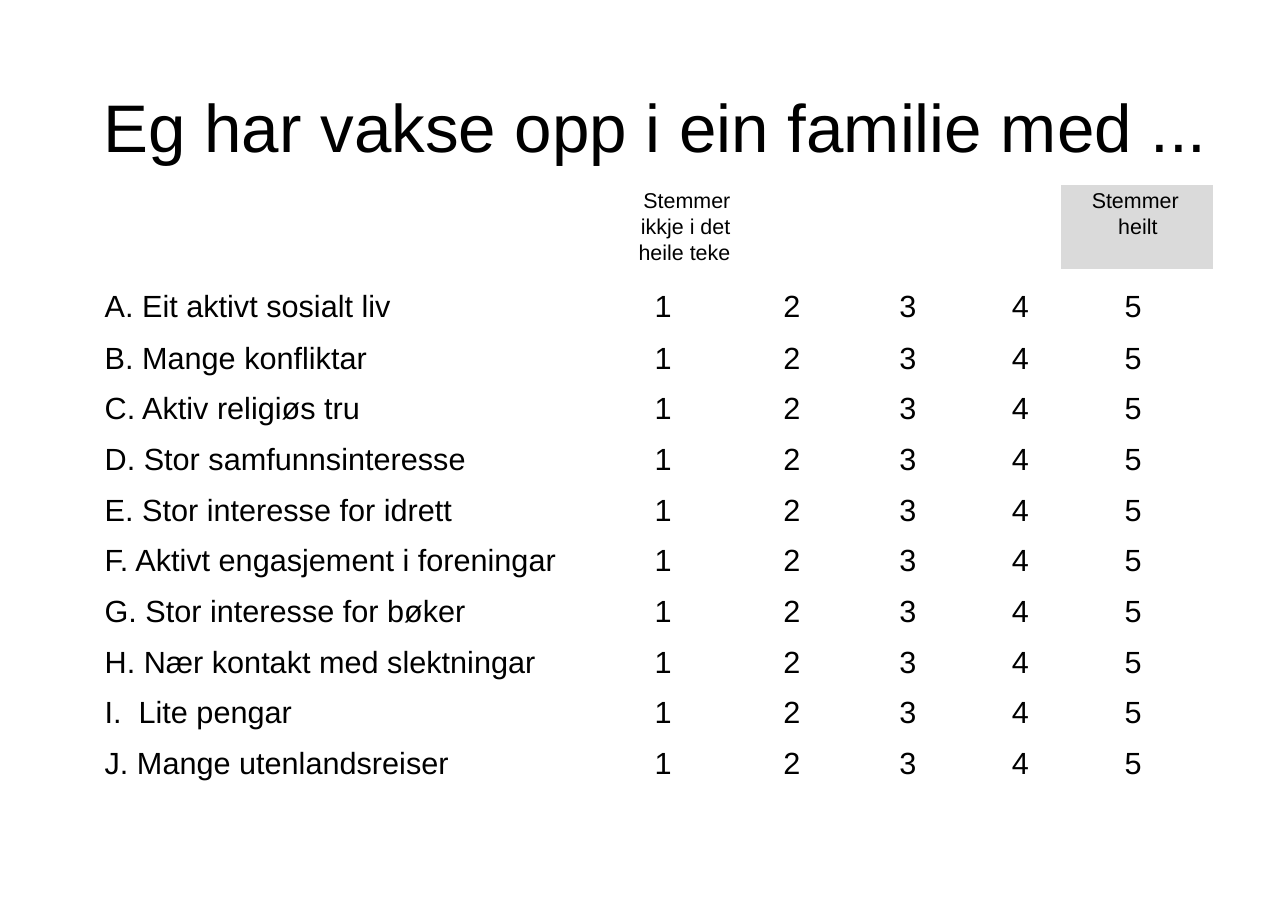
"""Build a survey slide that rates ten statements about growing up from 1 to 5."""
from dataclasses import dataclass

from pptx import Presentation
from pptx.dml.color import RGBColor
from pptx.enum.text import MSO_ANCHOR, MSO_AUTO_SIZE, PP_ALIGN
from pptx.util import Inches, Pt


@dataclass(frozen=True)
class Theme:
    font: str = "Arial"
    ink: RGBColor = RGBColor(0, 0, 0)
    shade: RGBColor = RGBColor(0xDA, 0xDA, 0xDA)
    title: Pt = Pt(44)
    body: Pt = Pt(20)
    label: Pt = Pt(14)


theme = Theme()


def write(frame, text, size, align=PP_ALIGN.LEFT):
    frame.text = text
    para = frame.paragraphs[0]
    para.alignment = align
    para.font.name = theme.font
    para.font.size = size
    para.font.color.rgb = theme.ink
    return para


def indent(para, left, first, right=0):
    props = para._p.get_or_add_pPr()
    for name, size in (("marL", left), ("marR", right), ("indent", first)):
        props.set(name, str(Inches(size)))


items = [
    "A. Eit aktivt sosialt liv",
    "B. Mange konfliktar",
    "C. Aktiv religiøs tru",
    "D. Stor samfunnsinteresse",
    "E. Stor interesse for idrett",
    "F. Aktivt engasjement i foreningar",
    "G. Stor interesse for bøker",
    "H. Nær kontakt med slektningar",
    "I.  Lite pengar",
    "J. Mange utenlandsreiser",
]
columns = [
    (4.28, PP_ALIGN.LEFT, 0.03, 0),
    (1.67, PP_ALIGN.CENTER, 0, 0.03),
    (0.85, PP_ALIGN.LEFT, 0.24, 0),
    (1.04, PP_ALIGN.CENTER, 0.02, 0.02),
    (0.87, PP_ALIGN.RIGHT, 0, 0.29),
    (1.38, PP_ALIGN.CENTER, 0, 0.07),
]
heights = [0.76, 0.61] + [0.46] * 8 + [0.38]

deck = Presentation()
deck.slide_width, deck.slide_height = Inches(11.69), Inches(8.28)
slide = deck.slides.add_slide(deck.slide_layouts[5])

title = slide.shapes.title
title.left, title.top = Inches(0.93), Inches(0.76)
title.width, title.height = Inches(10.17), Inches(0.75)
frame = title.text_frame
frame.margin_left = frame.margin_right = frame.margin_bottom = 0
frame.margin_top = Inches(0.01)
frame.vertical_anchor = MSO_ANCHOR.TOP
frame.auto_size = MSO_AUTO_SIZE.NONE
frame.word_wrap = True
indent(write(frame, "Eg har vakse opp i ein familie med ...", theme.title), 0.01, 0)

table = slide.shapes.add_table(
    len(heights), len(columns), Inches(0.92), Inches(1.68),
    Inches(sum(col[0] for col in columns)), Inches(sum(heights)),
).table
table.first_row = table.horz_banding = False
style = table._tbl.tblPr[0]
style.text = "{2D5ABB26-0587-4C30-8999-92F81FD0307C}"
for row, height in zip(table.rows, heights):
    row.height = Inches(height)
for column, (width, *_) in zip(table.columns, columns):
    column.width = Inches(width)
for cell in table.iter_cells():
    cell.fill.background()
    cell.margin_left = cell.margin_right = cell.margin_bottom = 0
    cell.margin_top = Inches(0.02)

low, high = table.cell(0, 0), table.cell(0, 5)
low.merge(table.cell(0, 1))
high.fill.solid()
high.fill.fore_color.rgb = theme.shade
low_text = write(low.text_frame, "Stemmer ikkje i det heile teke", theme.label, PP_ALIGN.RIGHT)
high_text = write(high.text_frame, "Stemmer heilt", theme.label)
indent(low_text, 4.6, -0.07, 0.24)
indent(high_text, 0.52, -0.24)
low_text.line_spacing = high_text.line_spacing = 1.08

for row, item in enumerate(items, 1):
    for col, (width, align, left, right) in enumerate(columns):
        cell = table.cell(row, col)
        cell.margin_left, cell.margin_right = Inches(left), Inches(right)
        cell.margin_top = Inches(0.19 if row == 1 else 0.05)
        write(cell.text_frame, str(col) if col else item, theme.body, align)

deck.save("out.pptx")
